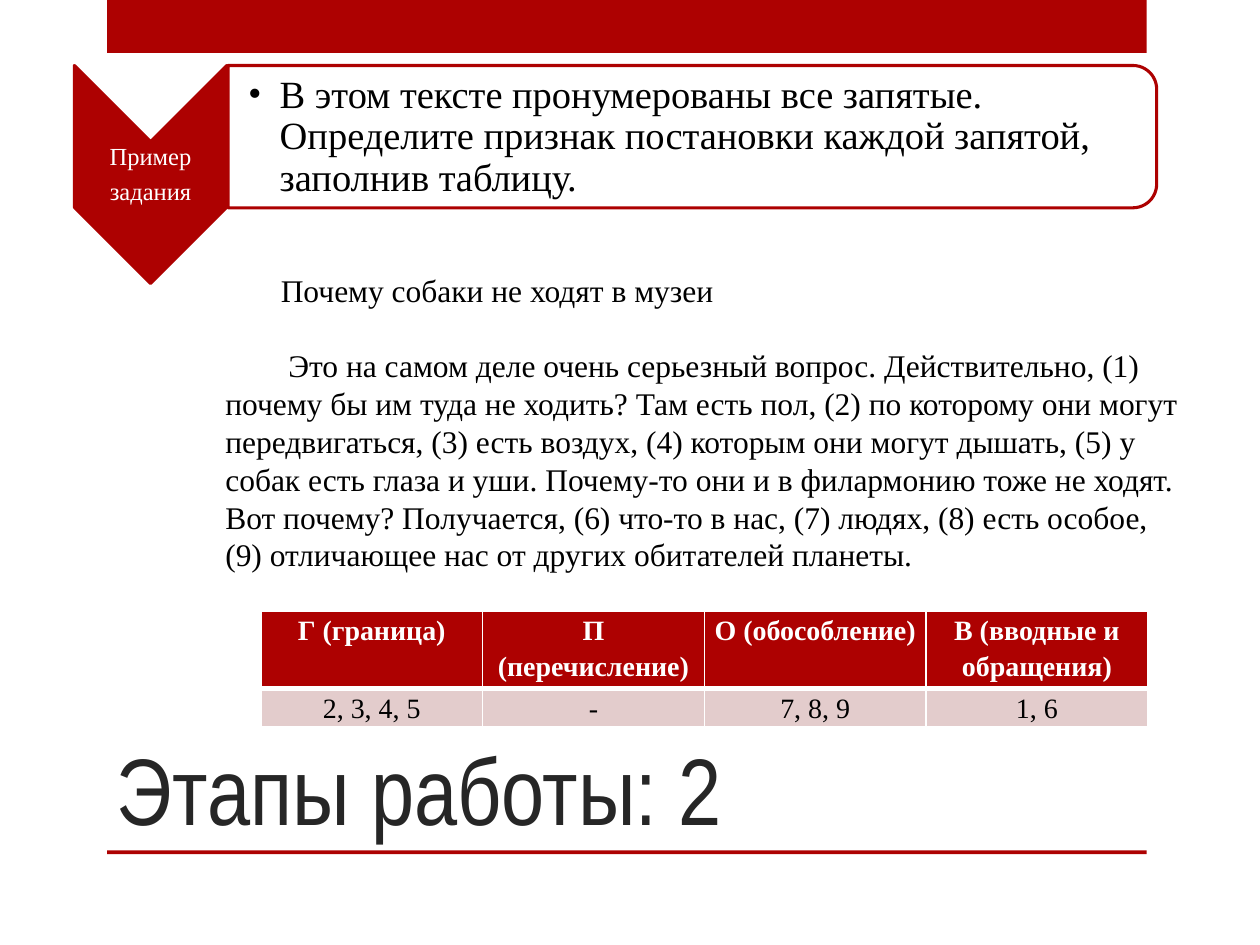
from dataclasses import dataclass
from typing import Optional

from lxml.etree import SubElement
from pptx import Presentation
from pptx.dml.color import RGBColor
from pptx.enum.shapes import MSO_SHAPE
from pptx.enum.text import MSO_ANCHOR, PP_ALIGN
from pptx.oxml import parse_xml
from pptx.oxml.ns import nsdecls, qn
from pptx.util import Inches, Pt

RED = RGBColor(0xAD, 0x01, 0x01)
PINK = RGBColor(0xE3, 0xCC, 0xCC)
WHITE = RGBColor(0xFF, 0xFF, 0xFF)
BLACK = RGBColor(0x00, 0x00, 0x00)
CHARCOAL = RGBColor(0x26, 0x26, 0x26)
SERIF = "Times New Roman"
NARROW = "Arial Narrow"


@dataclass(frozen=True)
class Box:
    left: float
    top: float
    width: float
    height: float

    def lengths(self):
        return [Inches(value) for value in (self.left, self.top, self.width, self.height)]


@dataclass(frozen=True)
class TextStyle:
    size: float
    color: RGBColor
    font: str = SERIF
    bold: bool = False
    align: PP_ALIGN = PP_ALIGN.LEFT
    line_spacing: Optional[float] = None
    space_after: float = 0


@dataclass(frozen=True)
class Paragraph:
    text: str
    margin: float = 0
    indent: float = 0
    bullet: str = ""


TITLE = TextStyle(54, CHARCOAL, NARROW)
LABEL = TextStyle(14, WHITE, align=PP_ALIGN.CENTER, line_spacing=0.9, space_after=5)
TASK = TextStyle(22, BLACK, line_spacing=0.9, space_after=3.3)
STORY_HEADING = TextStyle(18, BLACK, space_after=21.6)
STORY = TextStyle(18, BLACK)
HEADER = TextStyle(16, WHITE, bold=True, align=PP_ALIGN.CENTER, line_spacing=1.15)
ANSWER = TextStyle(16, BLACK, align=PP_ALIGN.CENTER, line_spacing=1.15)

TABLE_BOX = Box(2.07, 4.85, 7.04, 0.88)
ROW_HEIGHTS = (0.59, 0.29)
ROWS = (
    ("Г (граница)", "П (перечисление)", "О (обособление)", "В (вводные и обращения)"),
    ("2, 3, 4, 5", "-", "7, 8, 9", "1, 6"),
)


def write_paragraph(paragraph, content: Paragraph, style: TextStyle) -> None:
    paragraph.alignment = style.align
    paragraph.line_spacing = style.line_spacing
    paragraph.space_after = Pt(style.space_after)
    run = paragraph.add_run()
    run.text = content.text
    run.font.name = style.font
    run.font.size = Pt(style.size)
    run.font.bold = style.bold
    run.font.color.rgb = style.color
    properties = paragraph._p.get_or_add_pPr()
    properties.set("marL", str(Inches(content.margin)))
    properties.set("indent", str(Inches(content.indent)))
    if content.bullet:
        SubElement(properties, qn("a:buFont")).set("typeface", SERIF)
        SubElement(properties, qn("a:buChar")).set("char", content.bullet)


def set_margins(target, left: float, top: float, right: float, bottom: float) -> None:
    target.margin_left, target.margin_top = Inches(left), Inches(top)
    target.margin_right, target.margin_bottom = Inches(right), Inches(bottom)


def add_text(slide, box: Box, lines: list[tuple[Paragraph, TextStyle]],
             anchor: MSO_ANCHOR = MSO_ANCHOR.TOP,
             margins: tuple[float, float, float, float] = (0.1, 0.05, 0.1, 0.05)):
    shape = slide.shapes.add_textbox(*box.lengths())
    frame = shape.text_frame
    frame.word_wrap = True
    frame.vertical_anchor = anchor
    set_margins(frame, *margins)
    for index, (content, style) in enumerate(lines):
        paragraph = frame.add_paragraph() if index else frame.paragraphs[0]
        write_paragraph(paragraph, content, style)
    return shape


def add_block(slide, kind: MSO_SHAPE, box: Box, fill: RGBColor,
              outlined: bool = False, rotation: float = 0):
    shape = slide.shapes.add_shape(kind, *box.lengths())
    shape.shadow.inherit = False
    shape.rotation = rotation
    shape.fill.solid()
    shape.fill.fore_color.rgb = fill
    if outlined:
        shape.line.color.rgb = RED
        shape.line.width = Pt(1.75)
    else:
        shape.line.fill.background()
    return shape


def set_opacity(shape, percent: int) -> None:
    color = shape._element.spPr.find(qn("a:solidFill"))[0]
    SubElement(color, qn("a:alpha")).set("val", str(percent * 1000))


def set_cell_borders(cell, top: float, bottom: float) -> None:
    """White borders: 1 pt at the sides, the given widths above and below."""
    properties = cell._tc.get_or_add_tcPr()
    widths = {"lnL": 1, "lnR": 1, "lnT": top, "lnB": bottom}
    for index, (tag, width) in enumerate(widths.items()):
        properties.insert(index, parse_xml(
            f'<a:{tag} {nsdecls("a")} w="{Pt(width)}"><a:solidFill>'
            f'<a:srgbClr val="{WHITE}"/></a:solidFill></a:{tag}>'))


def add_comma_table(slide) -> None:
    table = slide.shapes.add_table(len(ROWS), len(ROWS[0]), *TABLE_BOX.lengths()).table
    for column in table.columns:
        column.width = Inches(TABLE_BOX.width / len(ROWS[0]))
    looks = ((HEADER, RED, 1, 3), (ANSWER, PINK, 3, 1))
    for row, height, texts, look in zip(table.rows, ROW_HEIGHTS, ROWS, looks):
        style, fill, top, bottom = look
        row.height = Inches(height)
        for cell, text in zip(row.cells, texts):
            set_margins(cell, 0.07, 0, 0.07, 0)
            cell.fill.solid()
            cell.fill.fore_color.rgb = fill
            set_cell_borders(cell, top, bottom)
            write_paragraph(cell.text_frame.paragraphs[0], Paragraph(text), style)


def main() -> None:
    presentation = Presentation()
    presentation.slide_width, presentation.slide_height = Inches(10), Inches(7.5)
    slide = presentation.slides.add_slide(presentation.slide_layouts[6])

    add_block(slide, MSO_SHAPE.RECTANGLE, Box(0.85, 0, 8.25, 0.42), RED)
    add_block(slide, MSO_SHAPE.RECTANGLE, Box(0.85, 6.75, 8.25, 0.03), RED)
    add_text(slide, Box(0.83, 5, 7.42, 1.75), [(Paragraph("Этапы работы: 2"), TITLE)],
             MSO_ANCHOR.BOTTOM)

    add_block(slide, MSO_SHAPE.CHEVRON, Box(0.33, 0.78, 1.73, 1.21), RED, True, 90)
    add_text(slide, Box(0.59, 1.13, 1.21, 0.52),
             [(Paragraph(word), LABEL) for word in ("Пример", "задания")],
             MSO_ANCHOR.MIDDLE, (0.01, 0.01, 0.01, 0.01))
    task_frame = add_block(slide, MSO_SHAPE.ROUND_2_SAME_RECTANGLE,
                           Box(4.93, -2.6, 1.13, 7.37), WHITE, True, 90)
    set_opacity(task_frame, 90)
    task = Paragraph("В этом тексте пронумерованы все запятые. Определите признак "
                     "постановки каждой запятой, заполнив таблицу.", 0.25, -0.25, "•")
    add_text(slide, Box(1.8, 0.58, 7.32, 1.02), [(task, TASK)],
             MSO_ANCHOR.MIDDLE, (0.17, 0.02, 0.02, 0.02))

    heading = Paragraph("Почему собаки не ходят в музеи", indent=0.44)
    story = Paragraph(
        "Это на самом деле очень серьезный вопрос. Действительно, (1) почему бы им туда "
        "не ходить? Там есть пол, (2) по которому они могут передвигаться, (3) есть воздух, "
        "(4) которым они могут дышать, (5) у собак есть глаза и уши. Почему-то они и в "
        "филармонию тоже не ходят. Вот почему? Получается, (6) что-то в нас, (7) людях, "
        "(8) есть особое, (9) отличающее нас от других обитателей планеты.", indent=0.5)
    story_box = add_text(slide, Box(1.69, 2.1, 7.8, 2.52),
                         [(heading, STORY_HEADING), (story, STORY)])
    story_box.fill.solid()
    story_box.fill.fore_color.rgb = WHITE

    add_comma_table(slide)
    presentation.save("out.pptx")


if __name__ == "__main__":
    main()
